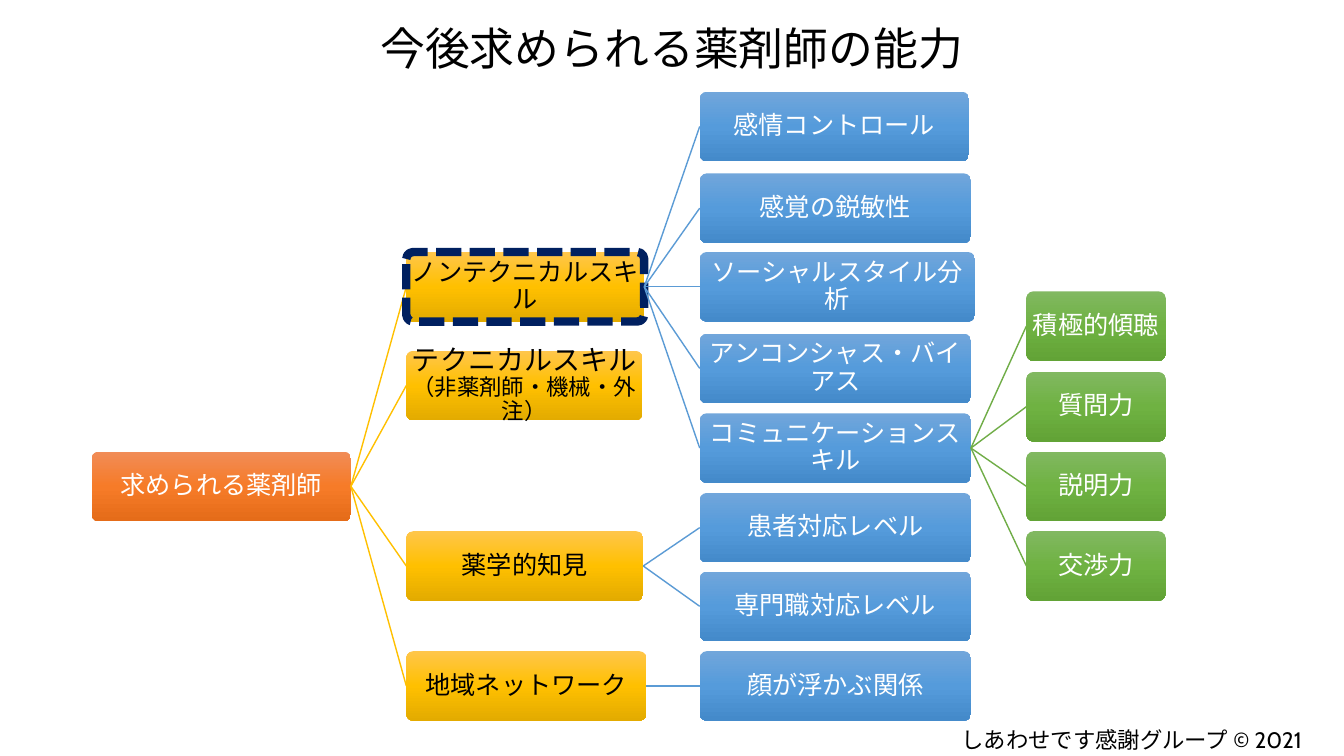
from copy import deepcopy
from dataclasses import dataclass, field

from lxml import etree
from pptx import Presentation
from pptx.dml.color import RGBColor
from pptx.enum import dml, shapes, text
from pptx.oxml import ns
from pptx.util import Inches, Pt

BLACK = RGBColor(0x00, 0x00, 0x00)
WHITE = RGBColor(0xFF, 0xFF, 0xFF)
NAVY = RGBColor(0x00, 0x20, 0x60)
GOLD_LINE = RGBColor(0xFF, 0xC0, 0x00)
BLUE_LINE = RGBColor(0x5B, 0x9B, 0xD5)
GREEN_LINE = RGBColor(0x70, 0xAD, 0x47)
ORANGE = [RGBColor(0xF1, 0x8C, 0x57), RGBColor(0xF6, 0x7B, 0x28), RGBColor(0xE5, 0x6C, 0x19)]
GOLD = [RGBColor(0xFF, 0xC6, 0x4B), RGBColor(0xFF, 0xC0, 0x00), RGBColor(0xE3, 0xAB, 0x00)]
BLUE = [RGBColor(0x71, 0xA6, 0xDB), RGBColor(0x55, 0x9B, 0xDB), RGBColor(0x44, 0x8A, 0xCA)]
GREEN = [RGBColor(0x81, 0xB8, 0x61), RGBColor(0x6F, 0xB2, 0x42), RGBColor(0x62, 0xA3, 0x36)]

JAPANESE = "Noto Sans CJK JP"
BOX_HEIGHT = 0.69
LEVELS = [
    (0.91, ORANGE, WHITE, None),
    (4.03, GOLD, BLACK, GOLD_LINE),
    (6.94, BLUE, WHITE, BLUE_LINE),
    (10.18, GREEN, WHITE, GREEN_LINE),
]


@dataclass
class Ability:
    label: str
    top: float
    width: float
    children: list = field(default_factory=list)
    sizes: tuple = (18,)
    highlighted: bool = False


COMMUNICATION = [
    Ability("積極的傾聴", 2.89, 1.38),
    Ability("質問力", 3.69, 1.38),
    Ability("説明力", 4.48, 1.38),
    Ability("交渉力", 5.27, 1.38),
]
NON_TECHNICAL = [
    Ability("感情コントロール", 0.91, 2.67),
    Ability("感覚の鋭敏性", 1.72, 2.69),
    Ability("ソーシャルスタイル分析", 2.5, 2.73),
    Ability("アンコンシャス・バイアス", 3.31, 2.69),
    Ability("コミュニケーションスキル", 4.1, 2.69, COMMUNICATION),
]
KNOWLEDGE = [
    Ability("患者対応レベル", 4.89, 2.69),
    Ability("専門職対応レベル", 5.67, 2.69),
]
PHARMACIST = Ability("求められる薬剤師", 4.48, 2.57, [
    Ability("ノンテクニカルスキル", 2.5, 2.36, NON_TECHNICAL, highlighted=True),
    Ability("テクニカルスキル\v（非薬剤師・機械・外注）", 3.48, 2.34, sizes=(20, 16)),
    Ability("薬学的知見", 5.27, 2.35, KNOWLEDGE),
    Ability("地域ネットワーク", 6.46, 2.38, [Ability("顔が浮かぶ関係", 6.46, 2.69)]),
])


def format_run(run, size, color, latin=JAPANESE):
    run.font.size = Pt(size)
    run.font.color.rgb = color
    run.font.name = latin
    east_asian = etree.SubElement(run.font._element, ns.qn("a:ea"))
    east_asian.set("typeface", JAPANESE)
    run.font._element.set("lang", "ja-JP")


def fill_gradient(shape, colors):
    shape.fill.gradient()
    shape.fill.gradient_angle = 270
    stop_list = shape._element.spPr.find(".//" + ns.qn("a:gsLst"))
    stop_list.insert(1, deepcopy(stop_list[0]))
    for stop, position, color in zip(shape.fill.gradient_stops, (0, 0.5, 1), colors):
        stop.position = position
        stop.color.rgb = color


def add_ability(slide, ability, level):
    left, gradient, ink, _ = LEVELS[level]
    box = slide.shapes.add_shape(
        shapes.MSO_SHAPE.ROUNDED_RECTANGLE, Inches(left), Inches(ability.top),
        Inches(ability.width), Inches(BOX_HEIGHT))
    box.adjustments[0] = 0.1
    box.shadow.inherit = False
    fill_gradient(box, gradient)
    if ability.highlighted:
        box.line.color.rgb = NAVY
        box.line.width = Pt(6)
        box.line.dash_style = dml.MSO_LINE.SQUARE_DOT
        box.line._ln.find(ns.qn("a:prstDash")).set("val", "sysDash")
    else:
        box.line.fill.background()
    frame = box.text_frame
    frame.word_wrap = True
    frame.vertical_anchor = text.MSO_ANCHOR.MIDDLE
    frame.margin_left = frame.margin_right = Inches(0.03)
    frame.margin_top = frame.margin_bottom = Inches(0.03)
    label = frame.paragraphs[0]
    label.text = ability.label
    label.alignment = text.PP_ALIGN.CENTER
    label.line_spacing = 0.9
    for run, size in zip(label.runs, ability.sizes):
        format_run(run, size, ink)
    return box


def add_branch(slide, ability, level=0):
    box = add_ability(slide, ability, level)
    for child in ability.children:
        link = slide.shapes.add_connector(
            shapes.MSO_CONNECTOR.STRAIGHT, box.left + box.width, box.top,
            Inches(LEVELS[level + 1][0]), Inches(child.top))
        link.line.color.rgb = LEVELS[level + 1][3]
        link.line.width = Pt(1)
        etree.SubElement(link._element.spPr, ns.qn("a:effectLst"))
        link.begin_connect(box, 3)
        link.end_connect(add_branch(slide, child, level + 1), 1)
    return box


def add_title(slide, left, top, width, height):
    title = slide.shapes.title
    title.left, title.top = Inches(left), Inches(top)
    title.width, title.height = Inches(width), Inches(height)
    title.text_frame.text = "今後求められる薬剤師の能力"
    title.text_frame.auto_size = text.MSO_AUTO_SIZE.NONE
    heading = title.text_frame.paragraphs[0]
    heading.alignment = text.PP_ALIGN.CENTER
    format_run(heading.runs[0], 32, BLACK)


def add_copyright(slide, left, top, width, height):
    credit = slide.shapes.add_textbox(Inches(left), Inches(top), Inches(width), Inches(height))
    credit.text_frame.word_wrap = True
    credit.text_frame.text = "しあわせです感謝グループ © 2021"
    line = credit.text_frame.paragraphs[0]
    line.alignment = text.PP_ALIGN.RIGHT
    format_run(line.runs[0], 16, BLACK, "Cabin")


def main():
    deck = Presentation()
    deck.slide_width, deck.slide_height = Inches(13.33), Inches(7.5)
    slide = deck.slides.add_slide(deck.slide_layouts[5])
    add_title(slide, 2.88, 0.15, 7.57, 0.64)
    add_branch(slide, PHARMACIST)
    add_copyright(slide, 8.72, 7.15, 4.29, 0.37)
    deck.save("out.pptx")


if __name__ == "__main__":
    main()
